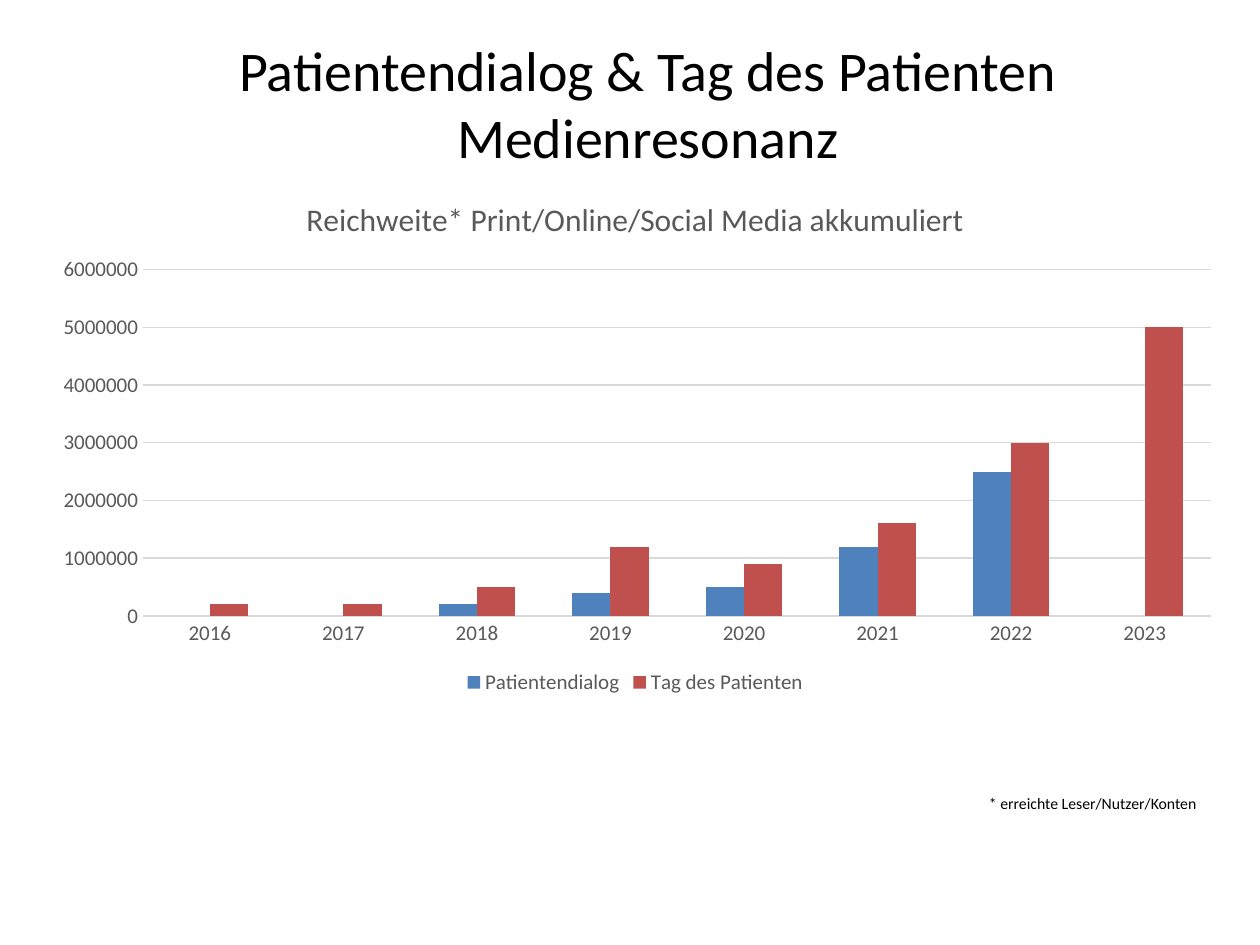
from copy import deepcopy

from lxml import etree
from pptx import Presentation
from pptx.chart.data import CategoryChartData
from pptx.dml.color import RGBColor
from pptx.enum.chart import XL_CHART_TYPE, XL_LEGEND_POSITION, XL_TICK_MARK
from pptx.enum.text import MSO_ANCHOR, MSO_AUTO_SIZE, PP_ALIGN
from pptx.oxml.ns import qn
from pptx.util import Pt

COLUMNS = XL_CHART_TYPE.COLUMN_CLUSTERED
BOTTOM = XL_LEGEND_POSITION.BOTTOM
NO_TICK = XL_TICK_MARK.NONE
MIDDLE, TOP = MSO_ANCHOR.MIDDLE, MSO_ANCHOR.TOP
NO_FIT = MSO_AUTO_SIZE.NONE
CENTER, LEFT = PP_ALIGN.CENTER, PP_ALIGN.LEFT
TITLE_ONLY = 5

FONT = "Calibri"
COLORS = {
    "text": "000000",
    "label": "595959",
    "grid": "D9D9D9",
    "dialog": "4F81BD",
    "day": "C0504D",
}
YEARS = [str(year) for year in range(2016, 2024)]
REACH = {
    "Patientendialog": (
        "dialog",
        [None, None, 200000, 400000, 500000, 1200000, 2500000, None],
    ),
    "Tag des Patienten": (
        "day",
        [200000, 200000, 500000, 1200000, 900000, 1600000, 3000000, 5000000],
    ),
}
PLOT_LAYOUT = {"x": 0.09, "y": 0.18, "w": 0.89, "h": 0.66}


def color(name):
    return RGBColor.from_string(COLORS[name])


def style_font(font, size, name="text"):
    font.name = FONT
    font.size = Pt(size)
    font.bold = False
    font.color.rgb = color(name)


def write_text(frame, text, size=12, name="text", align=LEFT, anchor=TOP):
    frame.word_wrap = True
    frame.auto_size = NO_FIT
    frame.vertical_anchor = anchor
    para = frame.paragraphs[0]
    para.alignment = align
    for index, line in enumerate(text.split("\n")):
        if index:
            para.add_line_break()
        span = para.add_run()
        span.text = line
        style_font(span.font, size, name)
    properties = para.runs[0].font._element if hasattr(para.runs[0].font, "_element") else para.runs[0]._r.rPr
    for line_break in para._p.findall(qn("a:br")):
        line_break.insert(0, deepcopy(properties))


def place_title(page, box):
    title = page.shapes.title
    title.left, title.top, title.width, title.height = map(Pt, box)
    write_text(
        title.text_frame,
        "Patientendialog & Tag des Patienten\nMedienresonanz",
        size=32, align=CENTER, anchor=MIDDLE,
    )


def fix_plot_area(chart):
    plot_area = chart._chartSpace.chart.plotArea
    for old in plot_area.findall(qn("c:layout")):
        plot_area.remove(old)
    layout = etree.Element(qn("c:layout"))
    manual = etree.SubElement(layout, qn("c:manualLayout"))
    settings = {"layoutTarget": "inner", "xMode": "edge", "yMode": "edge", **PLOT_LAYOUT}
    for tag, value in settings.items():
        etree.SubElement(manual, qn(f"c:{tag}")).set("val", str(value))
    plot_area.insert(0, layout)


def place_chart(page, box):
    data = CategoryChartData(number_format="General")
    data.categories = YEARS
    for name, (_, values) in REACH.items():
        data.add_series(name, values)
    chart = page.shapes.add_chart(COLUMNS, *map(Pt, box), data).chart
    style_font(chart.font, 10)

    chart.has_title = True
    span = chart.chart_title.text_frame.paragraphs[0].add_run()
    span.text = "Reichweite* Print/Online/Social Media akkumuliert"
    style_font(span.font, 18, "label")
    chart.chart_title.include_in_layout = False

    chart.has_legend = True
    chart.legend.position = BOTTOM
    chart.legend.include_in_layout = False
    style_font(chart.legend.font, 12, "label")

    for axis in (chart.category_axis, chart.value_axis):
        axis.major_tick_mark = axis.minor_tick_mark = NO_TICK
        axis.format.line.fill.background()
        style_font(axis.tick_labels.font, 12, "label")
    values_axis = chart.value_axis
    values_axis.minimum_scale, values_axis.maximum_scale = 0, 6000000
    values_axis.major_unit = 1000000
    values_axis.has_major_gridlines = True
    grid = values_axis.major_gridlines.format.line
    grid.width = Pt(0.75)
    grid.color.rgb = color("grid")

    plot = chart.plots[0]
    plot.gap_width, plot.overlap = 150, 0
    plot.vary_by_categories = False
    for series, (name, _) in zip(plot.series, REACH.values()):
        series.format.fill.solid()
        series.format.fill.fore_color.rgb = color(name)
    fix_plot_area(chart)


def place_footnote(page, box):
    note = page.shapes.add_textbox(*map(Pt, box))
    write_text(note.text_frame, "* erreichte Leser/Nutzer/Konten", size=9)


def main():
    deck = Presentation()
    deck.slide_width, deck.slide_height = Pt(720), Pt(540)
    page = deck.slides.add_slide(deck.slide_layouts[TITLE_ONLY])
    place_title(page, (60, 26, 620.5, 65))
    place_chart(page, (20, 100, 686, 300))
    place_footnote(page, (558, 450, 142, 18))
    deck.save("out.pptx")


if __name__ == "__main__":
    main()
